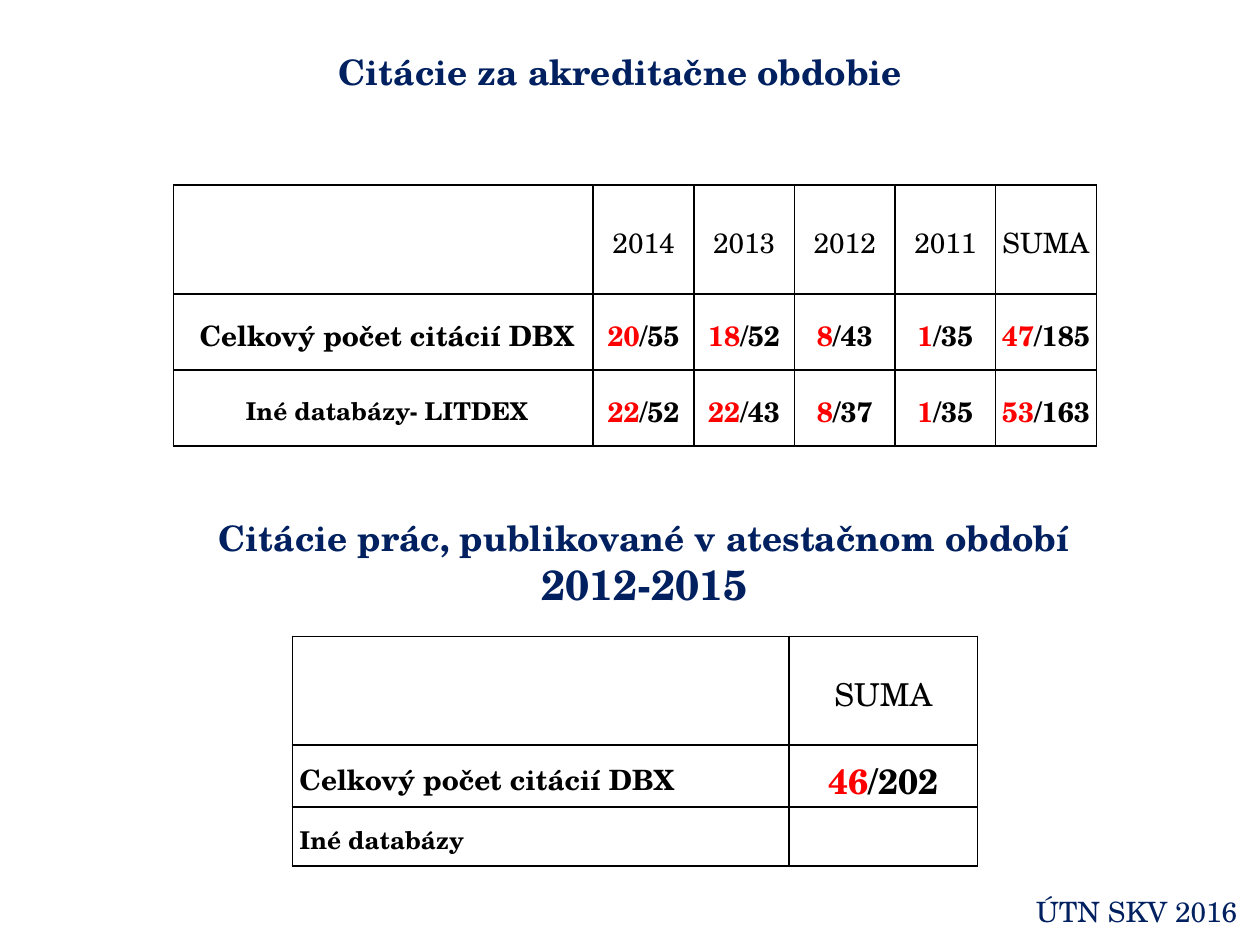
from lxml import etree
from pptx import Presentation
from pptx.dml.color import RGBColor
from pptx.enum import text as t
from pptx.oxml import ns
from pptx.util import Pt

FONT = "TeX Gyre Schola"
NAVY, RED, BLACK = "002060", "FF0000", "000000"
LEFT, MID, RIGHT = t.PP_ALIGN.LEFT, t.PP_ALIGN.CENTER, t.PP_ALIGN.RIGHT


def write(para, words, size=16, color=BLACK, bold=False, align=MID, space=None):
    para.alignment = align
    para.line_spacing = space
    run = para.add_run()
    run.text = words
    font = run.font
    font.name, font.size, font.bold = FONT, Pt(size), bold
    font.color.rgb = RGBColor.from_string(color)


def frame(cell):
    props = cell._tc.get_or_add_tcPr()
    for side in ("lnL", "lnR", "lnT", "lnB"):
        line = etree.SubElement(props, ns.qn("a:" + side), w=str(Pt(1)))
        fill = etree.SubElement(line, ns.qn("a:solidFill"))
        etree.SubElement(fill, ns.qn("a:srgbClr"), val=BLACK)
    cell.fill.background()
    cell.vertical_anchor = t.MSO_ANCHOR.MIDDLE
    cell.margin_left = cell.margin_right = 0
    cell.margin_top = cell.margin_bottom = 0


prs = Presentation()
prs.slide_width, prs.slide_height = Pt(720), Pt(540)
slide = prs.slides.add_slide(prs.slide_layouts[5])

title = slide.shapes.title
title.left, title.top, title.width, title.height = Pt(99.4), Pt(25.2), Pt(510.5), Pt(31.7)
title.text_frame.vertical_anchor = t.MSO_ANCHOR.MIDDLE
write(title.text_frame.paragraphs[0], "Citácie za akreditačne obdobie",
      size=20, color=NAVY, bold=True)

tables = [
    dict(at=(99.2, 105.7), cols=[239.8] + [57.5] * 5, rows=[62.4, 43.4, 43.4],
         align=MID, head=16, sum=16, cells=[
             ["", "2014", "2013", "2012", "2011", "SUMA"],
             ["Celkový počet citácií DBX", "20/55", "18/52", "8/43", "1/35", "47/185"],
             ["Iné databázy- LITDEX", "22/52", "22/43", "8/37", "1/35", "53/163"]]),
    dict(at=(167.1, 363.6), cols=[283.8, 107.8], rows=[62, 33.8, 33.8],
         align=LEFT, head=18, sum=20, cells=[
             ["", "SUMA"],
             ["Celkový počet citácií DBX", "46/202"],
             ["Iné databázy", ""]]),
]

for data in tables:
    cols, rows = data["cols"], data["rows"]
    x, y = data["at"]
    grid = slide.shapes.add_table(len(rows), len(cols), Pt(x), Pt(y),
                                  Pt(sum(cols)), Pt(sum(rows))).table
    grid.first_row = grid.horz_banding = False
    for col, width in zip(grid.columns, cols):
        col.width = Pt(width)
    for row, height in zip(grid.rows, rows):
        row.height = Pt(height)
    for r, line in enumerate(data["cells"]):
        for c, words in enumerate(line):
            cell = grid.cell(r, c)
            frame(cell)
            para = cell.text_frame.paragraphs[0]
            if not words:
                para.font.size = Pt(14)
            elif r == 0:
                write(para, words, size=data["head"], space=1.15)
            elif c == 0:
                cell.margin_left = Pt(4)
                write(para, words, size=18 - 2 * r, bold=True,
                      align=data["align"], space=1.15)
            else:
                own, total = words.split("/")
                for part, color in ((own, RED), ("/" + total, BLACK)):
                    write(para, part, size=data["sum"], color=color, bold=True, space=1.15)

labels = [
    ((70.6, 291.6, 595.4, 82), MID, True,
     [("Citácie prác, publikované v atestačnom období", 20), ("2012-2015", 24)]),
    ((554.2, 507.6, 160, 26.6), RIGHT, False, [("ÚTN SKV 2016", 16)]),
]
for spot, align, bold, lines in labels:
    body = slide.shapes.add_textbox(*map(Pt, spot)).text_frame
    body.word_wrap = True
    for i, (words, size) in enumerate(lines):
        para = body.add_paragraph() if i else body.paragraphs[0]
        write(para, words, size=size, color=NAVY, bold=bold, align=align)

prs.save("out.pptx")
